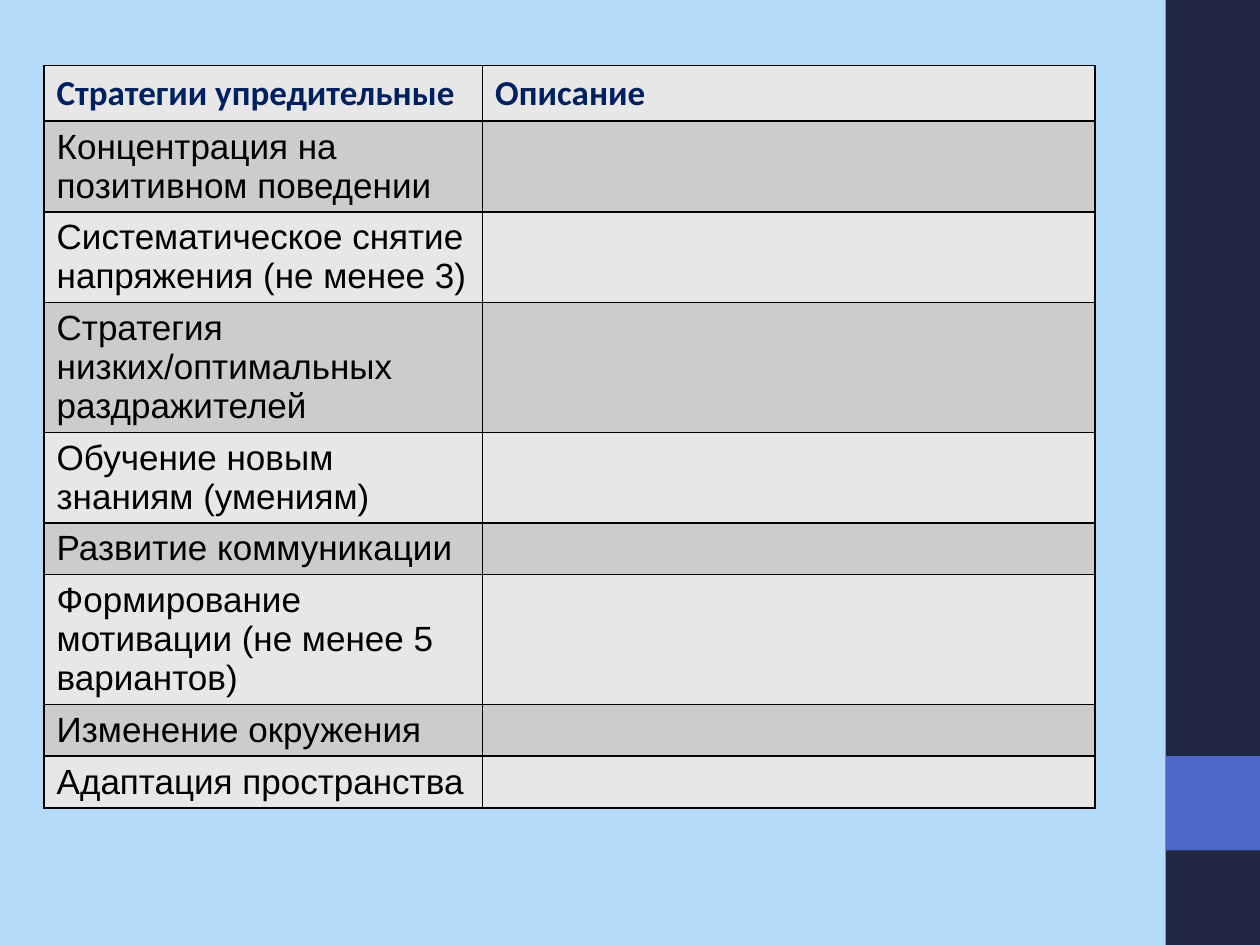
from pptx import Presentation
from pptx.dml.color import RGBColor
from pptx.enum.shapes import MSO_SHAPE
from pptx.oxml import parse_xml
from pptx.oxml.ns import nsdecls
from pptx.util import Inches, Pt

WIDTH, HEIGHT = 10, 7.5
BACKGROUND = "B4DCFA"
BAR = 0.75
SIDEBAR = [(0, HEIGHT, "212745"), (0.8 * HEIGHT, BAR, "4E67C8")]  # top, height, colour

HEADERS = ["Стратегии упредительные", "Описание"]
STRATEGIES = [
    "Концентрация на позитивном поведении",
    "Систематическое снятие напряжения (не менее 3)",
    "Стратегия низких/оптимальных раздражителей",
    "Обучение новым знаниям (умениям)",
    "Развитие коммуникации",
    "Формирование мотивации (не менее 5 вариантов)",
    "Изменение окружения",
    "Адаптация пространства",
]
TABLE_LEFT, TABLE_TOP = 0.35, 0.52
COLUMNS = [3.48, 4.86]
ROW_HEIGHT = 0.41
BANDS = ["E7E7E7", "CCCCCC"]


def rgb(value):
    return RGBColor.from_string(value)


def add_bar(s, top, height, color):
    sp = s.shapes.add_shape(MSO_SHAPE.RECTANGLE, Inches(WIDTH - BAR), Inches(top),
                            Inches(BAR), Inches(height))
    sp.shadow.inherit = False
    sp.fill.solid()
    sp.fill.fore_color.rgb = rgb(color)
    sp.line.fill.background()


def write(cell, text, font="Arial", size=20, color="000000", bold=False):
    r = cell.text_frame.paragraphs[0].add_run()
    r.text = text
    r.font.name, r.font.size, r.font.bold = font, Pt(size), bold
    r.font.color.rgb = rgb(color)


def style_cell(cell, fill, line="000000", width=1):
    """Give the cell a line on all four sides and a solid fill."""
    props = cell._tc.get_or_add_tcPr()
    for side in ("lnL", "lnR", "lnT", "lnB"):
        props.append(parse_xml(
            f'<a:{side} {nsdecls("a")} w="{Pt(width)}"><a:solidFill>'
            f'<a:srgbClr val="{line}"/></a:solidFill></a:{side}>'))
    cell.fill.solid()
    cell.fill.fore_color.rgb = rgb(fill)


def add_strategy_table(s):
    rows = len(STRATEGIES) + 1
    table = s.shapes.add_table(rows, len(COLUMNS), Inches(TABLE_LEFT), Inches(TABLE_TOP),
                               Inches(sum(COLUMNS)), Inches(ROW_HEIGHT * rows)).table
    for column, width in zip(table.columns, COLUMNS):
        column.width = Inches(width)
    for i, row in enumerate(table.rows):
        row.height = Inches(ROW_HEIGHT)
        for cell in row.cells:
            style_cell(cell, BANDS[i % 2])
    for j, header in enumerate(HEADERS):
        write(table.cell(0, j), header, font="Calibri", color="002060", bold=True)
    for i, strategy in enumerate(STRATEGIES, 1):
        write(table.cell(i, 0), strategy)


def main():
    prs = Presentation()
    prs.slide_width, prs.slide_height = Inches(WIDTH), Inches(HEIGHT)
    s = prs.slides.add_slide(prs.slide_layouts[6])
    s.background.fill.solid()
    s.background.fill.fore_color.rgb = rgb(BACKGROUND)
    for bar in SIDEBAR:
        add_bar(s, *bar)
    add_strategy_table(s)
    prs.save("out.pptx")


if __name__ == "__main__":
    main()
